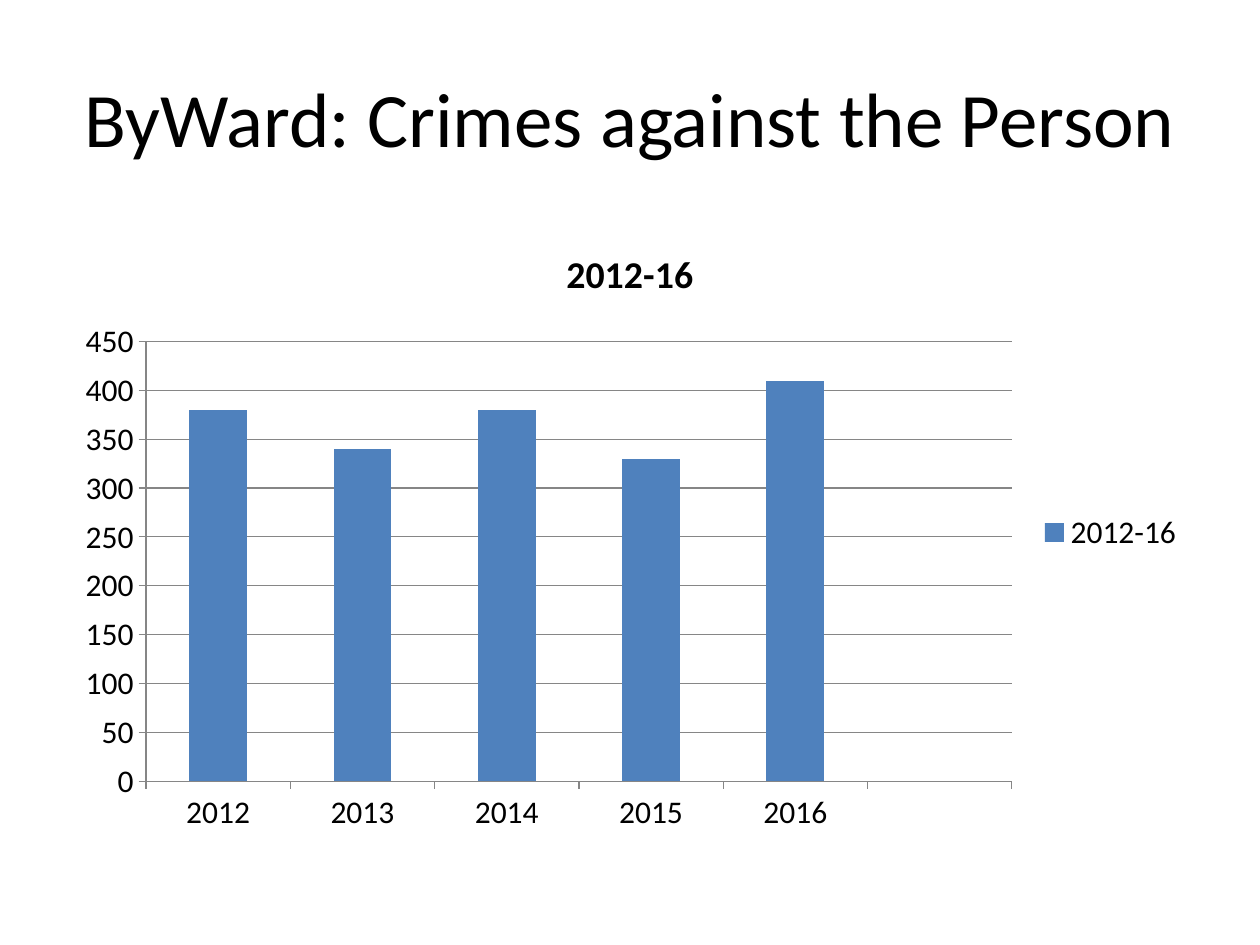
from pptx import Presentation
from pptx import util as u
from pptx.chart.data import CategoryChartData
from pptx.dml.color import RGBColor
from pptx.enum import chart as ch, text as tx

COLORS = {"ink": "000000", "bars": "4F81BD", "lines": "868686", "paper": "FFFFFF"}


def write(frame, content, size, bold=False, font="Calibri", color="ink"):
    paragraph = frame.paragraphs[0]
    paragraph.alignment = tx.PP_ALIGN.CENTER
    run = paragraph.add_run()
    run.text = content
    style_font(run.font, size, bold, font, color)


def style_font(target, size, bold=False, font="Calibri", color="ink"):
    target.name, target.size, target.bold = font, u.Pt(size), bold
    target.color.rgb = RGBColor.from_string(COLORS[color])


class CrimeSlide:
    """Holds the style and the current slide, with a method per element."""

    left, width = u.Cm(1.27), u.Cm(22.86)

    def __init__(self, deck):
        self.slide = deck.slides.add_slide(deck.slide_layouts[5])
        self.fill(self.slide.background, "paper")

    def fill(self, part, color):
        part.fill.solid()
        part.fill.fore_color.rgb = RGBColor.from_string(COLORS[color])

    def rule(self, line):
        line.width = u.Pt(0.75)
        line.color.rgb = RGBColor.from_string(COLORS["lines"])

    def title(self, content):
        heading = self.slide.shapes.title
        heading.left, heading.top = self.left, u.Cm(0.76)
        heading.width, heading.height = self.width, u.Cm(3.18)
        heading.text_frame.vertical_anchor = tx.MSO_ANCHOR.MIDDLE
        write(heading.text_frame, content, size=44)

    def columns(self, name, years, counts):
        crimes = CategoryChartData()
        crimes.categories = years
        crimes.add_series(name, counts)
        chart = self.slide.shapes.add_chart(
            ch.XL_CHART_TYPE.COLUMN_CLUSTERED,
            self.left, u.Cm(4.45), self.width, u.Cm(12.57), crimes).chart
        style_font(chart.font, 18)
        chart.has_title = True
        write(chart.chart_title.text_frame, name, size=21.6, bold=True)
        chart.chart_title.include_in_layout = False
        chart.has_legend = True
        chart.legend.position = ch.XL_LEGEND_POSITION.RIGHT
        chart.legend.include_in_layout = False

        plot = chart.plots[0]
        plot.gap_width, plot.vary_by_categories = 150, False
        self.fill(plot.series[0].format, "bars")

        for axis in (chart.category_axis, chart.value_axis):
            axis.major_tick_mark = ch.XL_TICK_MARK.OUTSIDE
            axis.minor_tick_mark = ch.XL_TICK_MARK.NONE
            self.rule(axis.format.line)
        counts_axis = chart.value_axis
        counts_axis.minimum_scale, counts_axis.maximum_scale = 0, 450
        counts_axis.major_unit = 50
        counts_axis.has_major_gridlines = True
        self.rule(counts_axis.major_gridlines.format.line)


def main():
    deck = Presentation()
    deck.slide_width, deck.slide_height = u.Cm(25.4), u.Cm(19.05)
    crime_slide = CrimeSlide(deck)
    crime_slide.title("ByWard: Crimes against the Person")
    crime_slide.columns(
        "2012-16",
        ["2012", "2013", "2014", "2015", "2016", ""],
        [380, 340, 380, 330, 410, None])
    deck.save("out.pptx")


if __name__ == "__main__":
    main()
